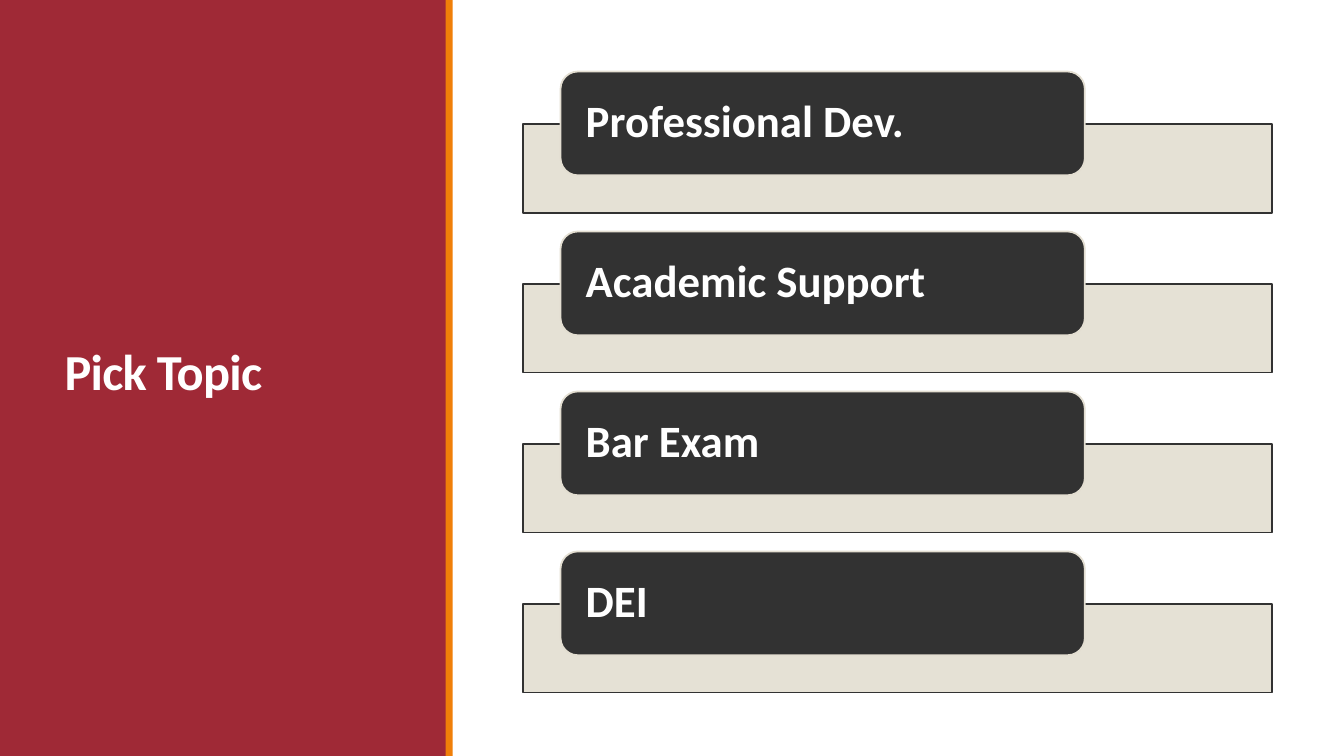
from lxml import etree
from pptx import Presentation
from pptx.dml.color import RGBColor
from pptx.enum.shapes import MSO_SHAPE as Preset
from pptx.enum.text import MSO_ANCHOR as Anchor, MSO_AUTO_SIZE as AutoSize, PP_ALIGN as Align
from pptx.oxml.ns import qn
from pptx.util import Inches, Pt

COLORS = {
    "white": "FFFFFF",
    "crimson": "9F2936",
    "orange": "F07F09",
    "charcoal": "323232",
    "sand": "E3DED1",
}
TOPICS = ["Professional Dev.", "Academic Support", "Bar Exam", "DEI"]
FIRST_TOP = 0.71
TOPIC_PITCH = 1.587
BAR_DROP = 0.52


def color(name):
    return RGBColor.from_string(COLORS[name])


def add_block(page, preset, left, top, width, height, fill, line=None):
    block = page.shapes.add_shape(
        preset, Inches(left), Inches(top), Inches(width), Inches(height))
    block.shadow.inherit = False
    block.fill.solid()
    block.fill.fore_color.rgb = color(fill)
    if line:
        block.line.color.rgb = color(line)
        block.line.width = Pt(1.25)
    else:
        block.line.fill.background()
    return block


def set_opacity(block, percent):
    fill_color = block.element.spPr.find(qn("a:solidFill"))[0]
    etree.SubElement(fill_color, qn("a:alpha"), val=str(percent * 1000))


def write_text(shape, text, size, line_spacing):
    """Put one bold white, left-aligned line in the middle of a shape."""
    frame = shape.text_frame
    frame.text = text
    frame.word_wrap = True
    frame.auto_size = AutoSize.NONE
    frame.vertical_anchor = Anchor.MIDDLE
    para = frame.paragraphs[0]
    para.alignment = Align.LEFT
    para.line_spacing = line_spacing
    para.font.name = "Calibri"
    para.font.size = Pt(size)
    para.font.bold = True
    para.font.color.rgb = color("white")
    return frame


def add_title(page, text):
    title = page.shapes.title
    title.left, title.top = Inches(0.54), Inches(0.57)
    title.width, title.height = Inches(3.37), Inches(6.31)
    frame = write_text(title, text, 36, 0.85)
    span = frame.paragraphs[0].runs[0]
    span.font._element.set("spc", "-50")
    # Bring the title in front of the side panel
    title.element.getparent().append(title.element)


def add_topic(page, text, top):
    bar = add_block(page, Preset.RECTANGLE, 5.19, top + BAR_DROP, 7.43, 0.88,
                    "sand", "charcoal")
    set_opacity(bar, 90)
    label = add_block(page, Preset.ROUNDED_RECTANGLE, 5.56, top, 5.2, 1.03,
                      "charcoal", "sand")
    frame = write_text(label, text, 32, 0.9)
    frame.margin_left = frame.margin_right = Inches(0.2)
    frame.margin_top = frame.margin_bottom = 0


def main():
    deck = Presentation()
    deck.slide_width, deck.slide_height = Inches(13.33), Inches(7.5)
    page = deck.slides.add_slide(deck.slide_layouts[5])
    add_block(page, Preset.RECTANGLE, 0, 0, 4.43, 7.5, "crimson")
    add_title(page, "Pick Topic")
    add_block(page, Preset.RECTANGLE, 4.42, 0, 0.07, 7.5, "orange")
    for index, topic in enumerate(TOPICS):
        add_topic(page, topic, FIRST_TOP + index * TOPIC_PITCH)
    deck.save("out.pptx")


if __name__ == "__main__":
    main()
